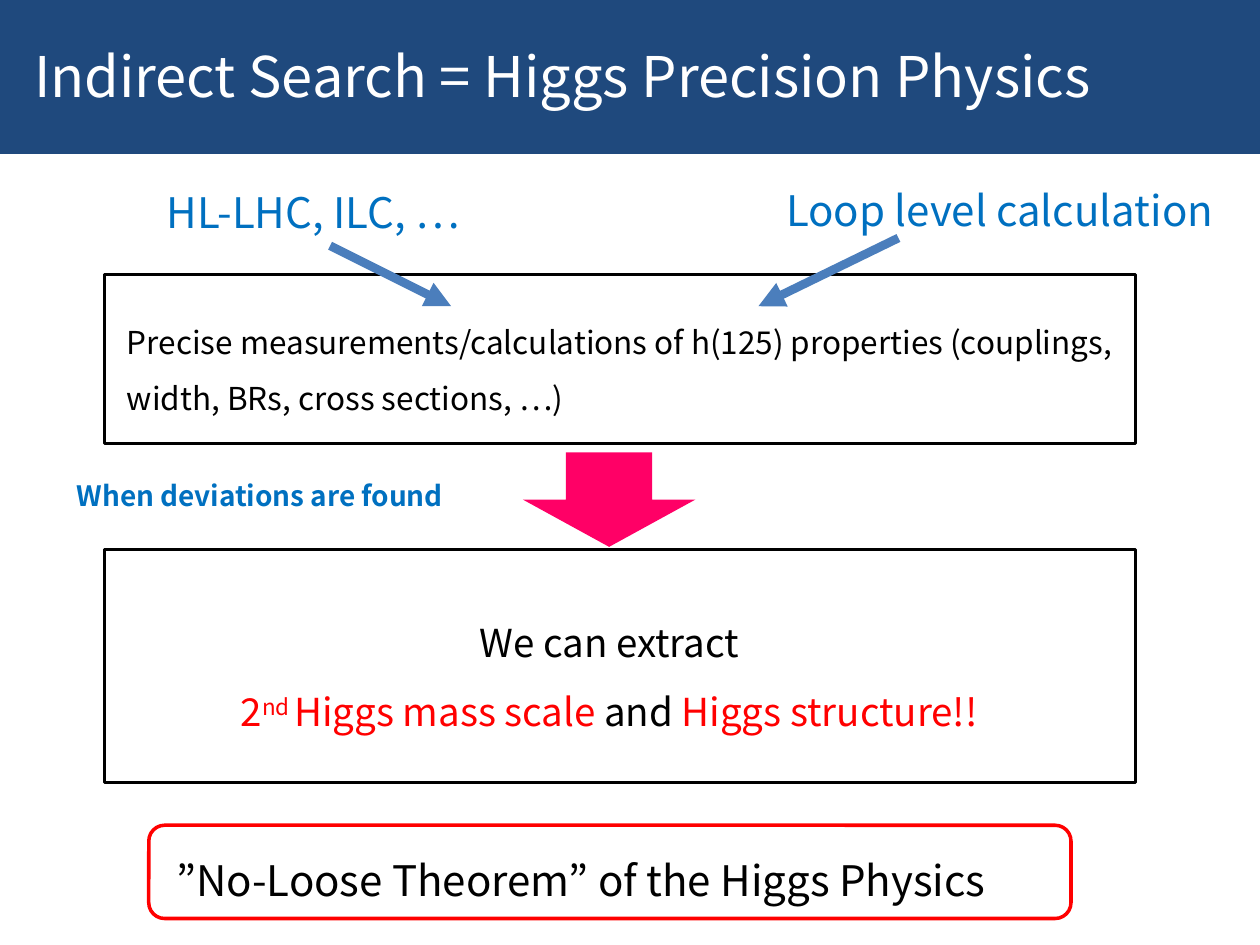
from dataclasses import dataclass

from lxml import etree
from pptx import Presentation
from pptx.dml.color import RGBColor
from pptx.enum.shapes import MSO_CONNECTOR, MSO_SHAPE
from pptx.enum.text import MSO_ANCHOR, PP_ALIGN
from pptx.oxml.ns import qn
from pptx.util import Pt

RECTANGLE = MSO_SHAPE.RECTANGLE
ROUNDED = MSO_SHAPE.ROUNDED_RECTANGLE
DOWN_ARROW = MSO_SHAPE.DOWN_ARROW
STRAIGHT = MSO_CONNECTOR.STRAIGHT
LEFT = PP_ALIGN.LEFT
CENTER = PP_ALIGN.CENTER
TOP = MSO_ANCHOR.TOP
MIDDLE = MSO_ANCHOR.MIDDLE


@dataclass(frozen=True)
class Theme:
    font: str = "Noto Sans CJK JP"
    white: str = "FFFFFF"
    black: str = "000000"
    navy: str = "1F497D"
    blue: str = "0070C0"
    steel: str = "4B7EBC"
    red: str = "FF0000"
    pink: str = "FF0066"
    title: int = 32
    heading: int = 24
    result: int = 22
    body: int = 18
    note: int = 16
    frame_width: float = 2
    arrow_width: float = 5
    line_spacing: float = 1.5


class SlideBuilder:
    def __init__(self, slide, theme):
        self.slide = slide
        self.theme = theme

    def shape(self, kind, box, fill=None, line=None):
        shape = self.slide.shapes.add_shape(kind, *map(Pt, box))
        shape.shadow.inherit = False
        if fill:
            shape.fill.solid()
            shape.fill.fore_color.rgb = RGBColor.from_string(fill)
        else:
            shape.fill.background()
        if line:
            shape.line.color.rgb = RGBColor.from_string(line)
            shape.line.width = Pt(self.theme.frame_width)
        else:
            shape.line.fill.background()
        return shape

    def frame(self, box, color, rounding):
        frame = self.shape(ROUNDED, box, line=color)
        frame.adjustments[0] = rounding

    def format_run(self, run, size, color, bold=False):
        run.font.name = self.theme.font
        run.font.size = Pt(size)
        run.font.bold = bold
        run.font.color.rgb = RGBColor.from_string(color)

    def set_text(self, text_frame, text, size, color, align=LEFT, anchor=TOP,
                 spacing=None, bold=False):
        text_frame.word_wrap = True
        text_frame.vertical_anchor = anchor
        text_frame.text = text
        for paragraph in text_frame.paragraphs:
            paragraph.alignment = align
            paragraph.line_spacing = spacing or self.theme.line_spacing
            for run in paragraph.runs:
                self.format_run(run, size, color, bold)

    def title(self, box, text):
        bar = self.shape(RECTANGLE, box, fill=self.theme.navy)
        bar.text_frame.margin_left = Pt(19.5)
        self.set_text(bar.text_frame, text, self.theme.title, self.theme.white,
                      anchor=MIDDLE, spacing=1.0)

    def label(self, box, text, size, color, align=LEFT, bold=False):
        label = self.shape(RECTANGLE, box, fill=self.theme.white)
        self.set_text(label.text_frame, text, size, color, align, bold=bold)
        return label

    def text(self, box, text, size, color):
        text_box = self.slide.shapes.add_textbox(*map(Pt, box))
        self.set_text(text_box.text_frame, text, size, color)

    def add_colored_line(self, shape, size, parts):
        paragraph = shape.text_frame.add_paragraph()
        paragraph.alignment = CENTER
        paragraph.line_spacing = self.theme.line_spacing
        for text, color, raised in parts:
            run = paragraph.add_run()
            run.text = text
            self.format_run(run, size, color)
            if raised:
                run._r.get_or_add_rPr().set("baseline", "30000")

    def arrow(self, start, end):
        arrow = self.slide.shapes.add_connector(STRAIGHT, *map(Pt, start + end))
        arrow.line.color.rgb = RGBColor.from_string(self.theme.steel)
        arrow.line.width = Pt(self.theme.arrow_width)
        properties = arrow._element.spPr
        etree.SubElement(properties.find(qn("a:ln")), qn("a:tailEnd"), type="triangle")
        etree.SubElement(properties, qn("a:effectLst"))


def main():
    presentation = Presentation()
    presentation.slide_width = Pt(720)
    presentation.slide_height = Pt(540)
    slide = presentation.slides.add_slide(presentation.slide_layouts[6])
    theme = Theme()
    builder = SlideBuilder(slide, theme)
    frame_left, frame_width = 59.8, 589

    builder.label((422.6, 87.8, 297.4, 47.5), "Loop level calculation",
                  theme.heading, theme.blue, CENTER)
    builder.title((0, -2, 720, 90), "Indirect Search = Higgs Precision Physics")

    builder.label((65.5, 170, 578.2, 70),
                  "Precise measurements/calculations of h(125) properties "
                  "(couplings, width, BRs, cross sections, …)",
                  theme.body, theme.black)
    builder.frame((frame_left, 157, frame_width, 96.5), theme.black, 0)

    builder.shape(DOWN_ARROW, (298.8, 258.5, 98.6, 54), fill=theme.pink)
    result = builder.label((47.5, 337, 601.2, 84.2), "We can extract",
                           theme.result, theme.black, CENTER)
    builder.add_colored_line(result, theme.result, [
        ("2", theme.red, False),
        ("nd ", theme.red, True),
        ("Higgs mass scale ", theme.red, False),
        ("and ", theme.black, False),
        ("Higgs structure!!", theme.red, False),
    ])
    builder.frame((frame_left, 313.9, frame_width, 133.2), theme.black, 0)

    builder.text((93.6, 470.2, 538.6, 47.5),
                 "”No-Loose Theorem” of the Higgs Physics",
                 theme.heading, theme.black)
    builder.label((65.5, 88.6, 226.8, 47.5), "HL-LHC, ILC, …",
                  theme.heading, theme.blue, CENTER)
    builder.arrow((188.6, 140.4), (257.8, 175))
    builder.arrow((513.4, 136), (433.4, 175))
    builder.label((36.7, 260.6, 250.6, 33.8), "When deviations are found",
                  theme.note, theme.blue, bold=True)
    builder.frame((85, 471.6, 527, 53.3), theme.red, 0.17)

    presentation.save("out.pptx")


if __name__ == "__main__":
    main()
